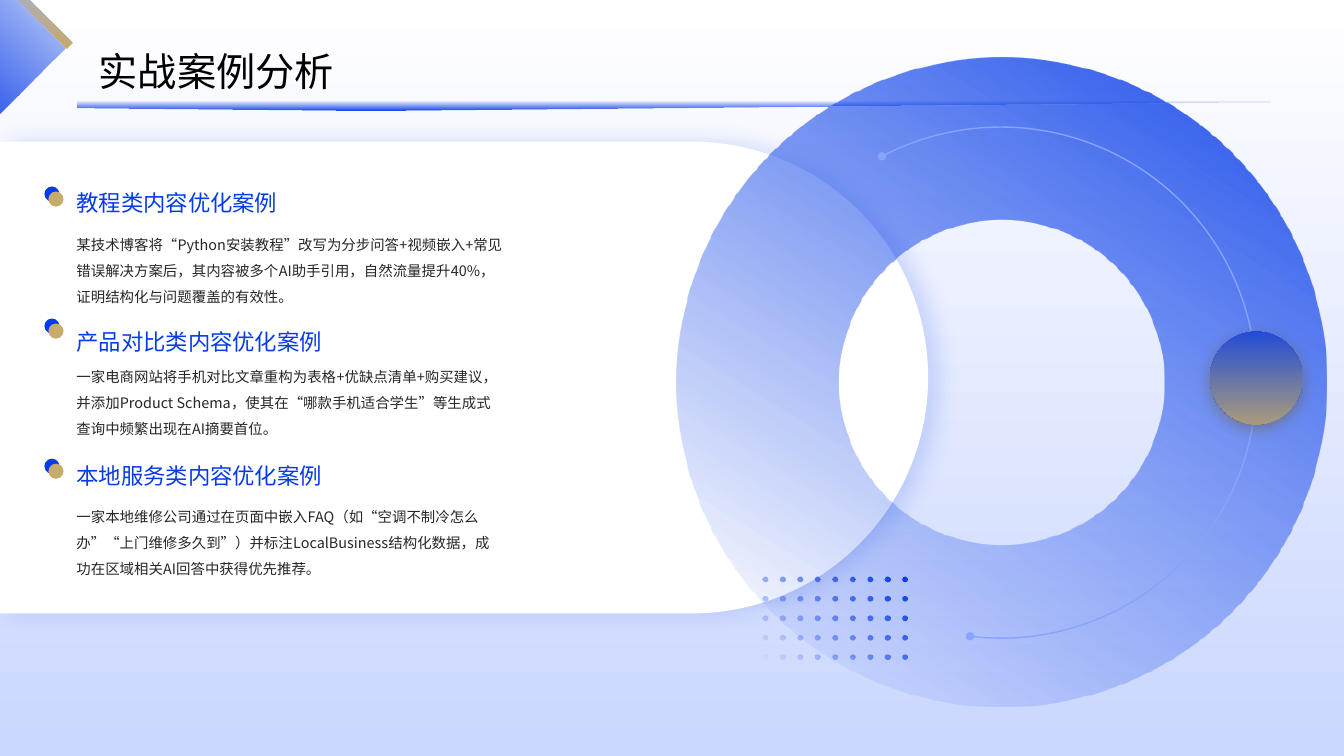
from itertools import product
from math import cos, pi, sin

from pptx import Presentation
from pptx.dml.color import RGBColor
from pptx.enum.shapes import MSO_SHAPE
from pptx.enum.text import MSO_ANCHOR
from pptx.oxml import parse_xml
from pptx.oxml.ns import nsdecls, qn
from pptx.util import Inches, Pt

FONT = "Noto Sans CJK SC"
BLUE = RGBColor(0x06, 0x3C, 0xE8)
GOLD = RGBColor(0xC6, 0xAB, 0x6A)
BROWN = RGBColor(0x6E, 0x5A, 0x2A)
PALE_BLUE = RGBColor(0xCA, 0xD6, 0xFE)
ARC_BLUE = RGBColor(0x88, 0xA3, 0xFC)
WHITE = RGBColor(0xFF, 0xFF, 0xFF)
BLACK = RGBColor(0, 0, 0)
INK = RGBColor(0x26, 0x26, 0x26)


def paint_gradient(shape, angle, start, end, end_alpha=0, end_at=100):
    shape.fill.background()
    properties = shape._element.spPr
    gradient = parse_xml(
        f'<a:gradFill {nsdecls("a")} rotWithShape="1"><a:gsLst>'
        f'<a:gs pos="0"><a:srgbClr val="{start}"/></a:gs>'
        f'<a:gs pos="{end_at * 1000}"><a:srgbClr val="{end}">'
        f'<a:alpha val="{end_alpha * 1000}"/></a:srgbClr></a:gs>'
        f'</a:gsLst><a:lin ang="{angle * 60000}" scaled="0"/></a:gradFill>')
    properties.replace(properties.find(qn("a:noFill")), gradient)


def add_text(text, left, top, width, height, size, color, spacing, anchor):
    box = slide.shapes.add_textbox(Inches(left), Inches(top), Inches(width), Inches(height))
    frame = box.text_frame
    frame.word_wrap = True
    frame.vertical_anchor = anchor
    frame.text = text
    paragraph = frame.paragraphs[0]
    paragraph.line_spacing = spacing
    font = paragraph.runs[0].font
    font.name = FONT
    font.size = Pt(size)
    font.color.rgb = color
    font._element.append(parse_xml(f'<a:ea {nsdecls("a")} typeface="{FONT}"/>'))
    return frame


prs = Presentation()
prs.slide_width = Inches(13.33)
prs.slide_height = Inches(7.5)
slide = prs.slides.add_slide(prs.slide_layouts[6])
shapes = slide.shapes

backdrop = shapes.add_shape(MSO_SHAPE.RECTANGLE, 0, 0, prs.slide_width, prs.slide_height)
paint_gradient(backdrop, 90, WHITE, PALE_BLUE, 100)

panel = shapes.add_shape(MSO_SHAPE.ROUND_2_SAME_RECTANGLE,
                         Inches(2.26), Inches(-0.86), Inches(4.68), Inches(9.21))
panel.adjustments[0] = 0.5
panel.adjustments[1] = 0
panel.rotation = 90
panel.fill.solid()
panel.fill.fore_color.rgb = WHITE

circle = [(0.03 * cos(step * pi / 8), 0.03 * sin(step * pi / 8)) for step in range(16)]
dot_outlines = [
    [(Inches(7.59 + column * 0.1725 + x), Inches(5.75 + row * 0.19 + y)) for x, y in circle]
    for column, row in product(range(9), range(5))]
dot_builder = shapes.build_freeform(*dot_outlines[0][0])
for outline in dot_outlines:
    dot_builder.move_to(*outline[0])
    dot_builder.add_line_segments(outline[1:], close=True)
dot_grid = dot_builder.convert_to_shape()
paint_gradient(dot_grid, 135, BLUE, BLUE)

cases = [
    ("教程类内容优化案例", 1.77, 2.21, 1.85,
     "某技术博客将“Python安装教程”改写为分步问答+视频嵌入+常见错误解决方案后，"
     "其内容被多个AI助手引用，自然流量提升40%，证明结构化与问题覆盖的有效性。"),
    ("产品对比类内容优化案例", 3.15, 3.52, 3.16,
     "一家电商网站将手机对比文章重构为表格+优缺点清单+购买建议，并添加Product Schema，"
     "使其在“哪款手机适合学生”等生成式查询中频繁出现在AI摘要首位。"),
    ("本地服务类内容优化案例", 4.48, 4.91, 4.55,
     "一家本地维修公司通过在页面中嵌入FAQ（如“空调不制冷怎么办”“上门维修多久到”）"
     "并标注LocalBusiness结构化数据，成功在区域相关AI回答中获得优先推荐。"),
]
for heading, heading_top, story_top, marker_top, story in cases:
    add_text(story, 0.66, story_top, 4.42, 0.91, 10.3, INK, 1.5, MSO_ANCHOR.TOP)
    add_text(heading, 0.66, heading_top, 4.23, 0.42, 16, BLUE, 1.3, MSO_ANCHOR.BOTTOM)
    for left, top, color in [(0.44, marker_top, BLUE), (0.48, marker_top + 0.05, GOLD)]:
        marker = shapes.add_shape(MSO_SHAPE.OVAL, Inches(left), Inches(top),
                                  Inches(0.15), Inches(0.15))
        marker.fill.solid()
        marker.fill.fore_color.rgb = color

ring = shapes.add_shape(MSO_SHAPE.DONUT, Inches(6.71), Inches(0.57), Inches(6.44), Inches(6.44))
ring.rotation = 76.7
paint_gradient(ring, 45, BLUE, BLUE, end_at=85)

orbit = shapes.add_shape(MSO_SHAPE.ARC, Inches(7.39), Inches(1.26), Inches(5.07), Inches(5.07))
orbit.adjustments[0] = 65.59
orbit.adjustments[1] = 194.33
orbit.rotation = 133
orbit.fill.background()

planet = shapes.add_shape(MSO_SHAPE.ROUNDED_RECTANGLE,
                          Inches(12), Inches(3.29), Inches(0.92), Inches(0.92))
planet.adjustments[0] = 0.5
planet.rotation = 45
paint_gradient(planet, 45, BLUE, GOLD, 100)

title = add_text("实战案例分析", 0.98, 0.31, 9.74, 0.65, 28, BLACK, 1.3, MSO_ANCHOR.MIDDLE)
title.margin_left = title.margin_right = title.margin_top = title.margin_bottom = 0

corner_points = [(0.44, -0.45), (0.44, 0.6), (-0.03, 1.07), (-1.37, -0.27), (-1.37, -0.45)]
underline_points = [(0.77, 1.01), (0.77, 1.07), (3.85, 1.1), (12.6, 1.02), (12.6, 1.01)]

for points, rotation in [(corner_points, 45), (underline_points, 0)]:
    corners = [(Inches(x), Inches(y)) for x, y in points]
    builder = shapes.build_freeform(*corners[0])
    builder.add_line_segments(corners[1:], close=True)
    outline_shape = builder.convert_to_shape()
    outline_shape.rotation = rotation
    paint_gradient(outline_shape, 270, BLUE, BLUE)

gold_edge = shapes.add_shape(MSO_SHAPE.RECTANGLE,
                             Inches(-0.32), Inches(-0.01), Inches(1.18), Inches(0.09))
gold_edge.rotation = 45
paint_gradient(gold_edge, 180, GOLD, GOLD)

for shape in shapes:
    shape.shadow.inherit = False
    shape.line.fill.background()

orbit.line.color.rgb = ARC_BLUE
orbit.line.width = Pt(1)
orbit_line = orbit._element.spPr.find(qn("a:ln"))
for end in ("headEnd", "tailEnd"):
    orbit_line.append(parse_xml(f'<a:{end} {nsdecls("a")} type="oval"/>'))

for shape, color, alpha, blur, distance, direction in [
        (panel, BLUE, 15, 16, 8, 0), (planet, BROWN, 47, 11, 3, 90)]:
    shape._element.spPr.find(qn("a:effectLst")).append(parse_xml(
        f'<a:outerShdw {nsdecls("a")} blurRad="{Pt(blur)}" dist="{Pt(distance)}" '
        f'dir="{direction * 60000}" algn="ctr" rotWithShape="0"><a:srgbClr val="{color}">'
        f'<a:alpha val="{alpha * 1000}"/></a:srgbClr></a:outerShdw>'))

prs.save("out.pptx")
